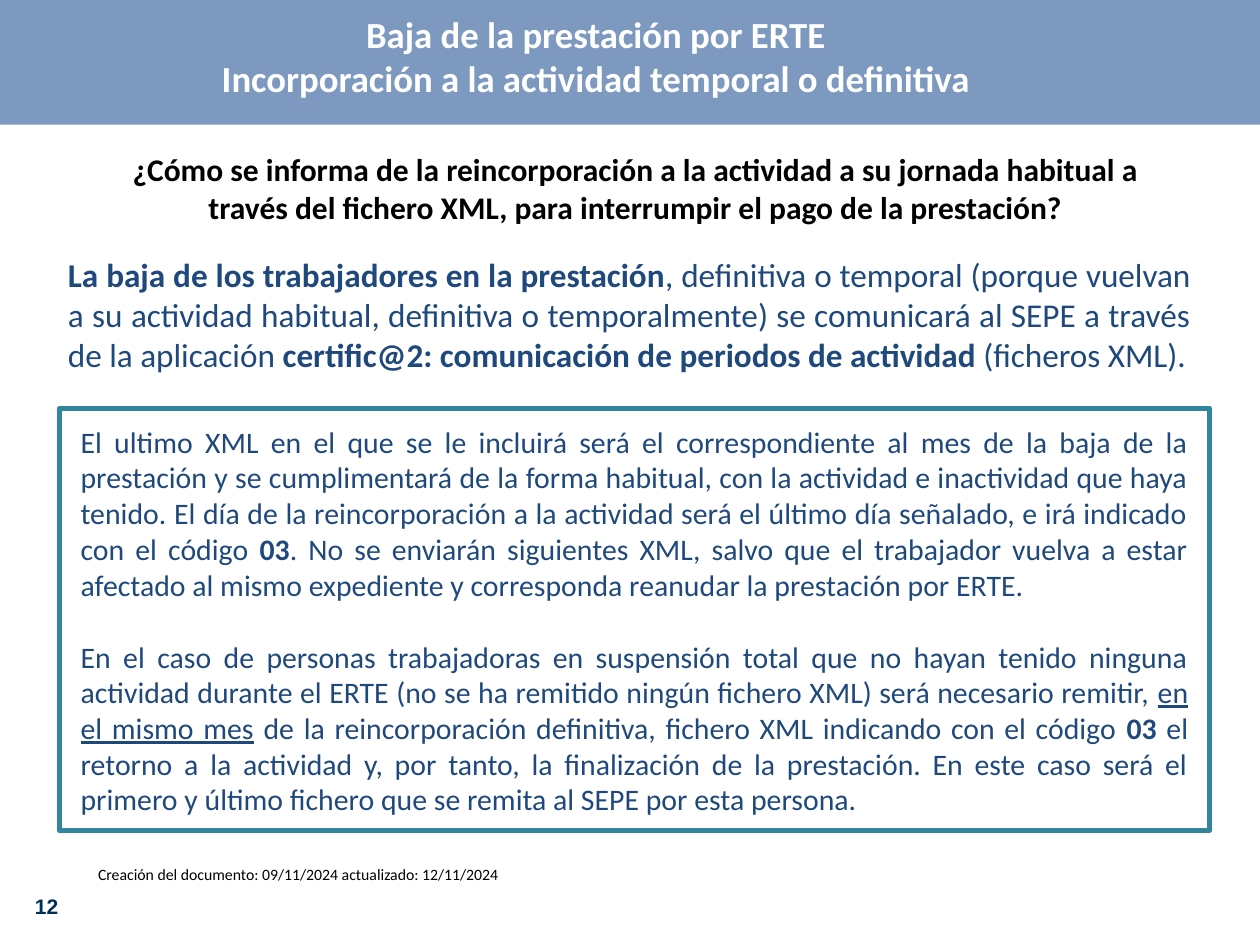
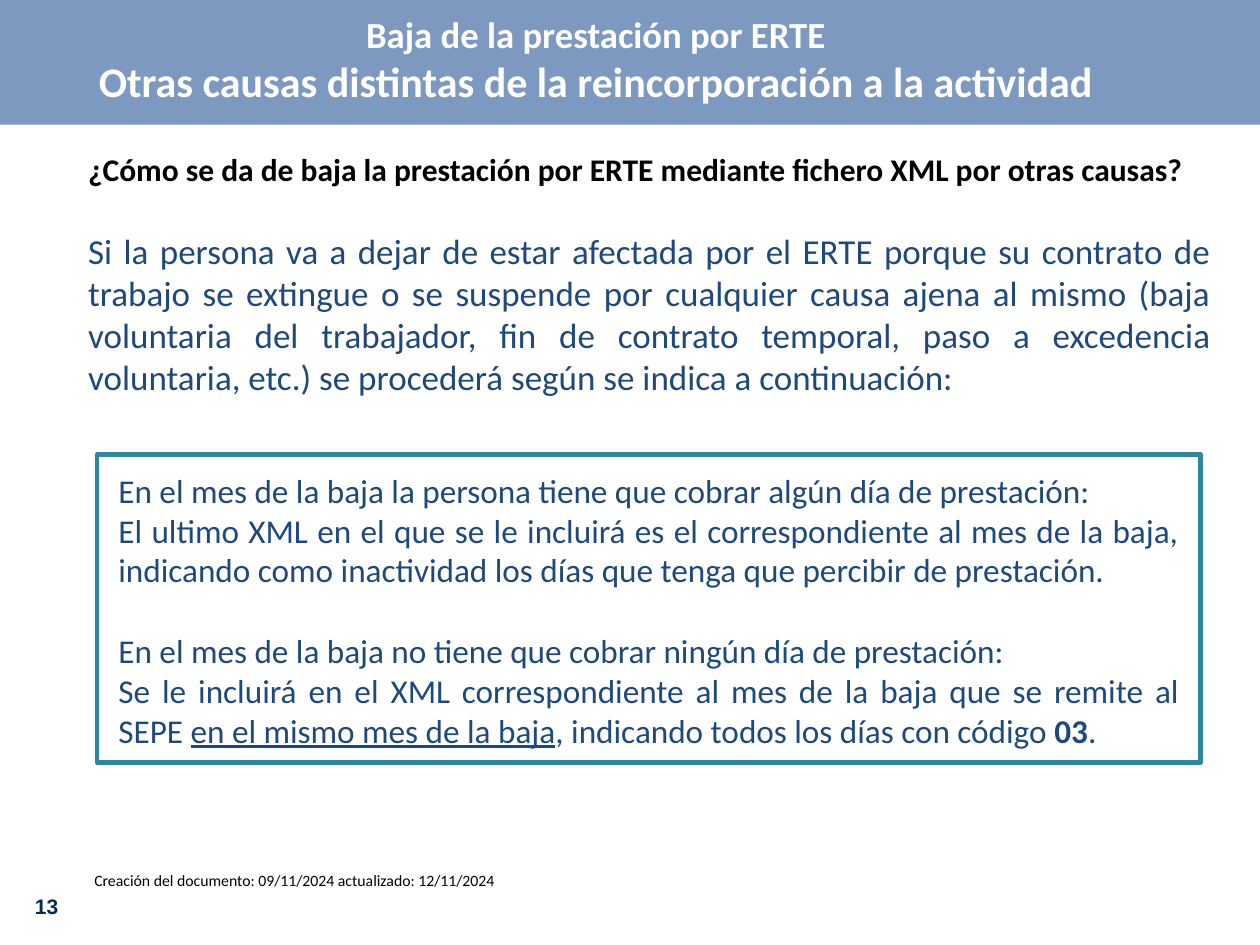
from pptx import Presentation
from pptx.dml.color import RGBColor
from pptx.enum.shapes import MSO_SHAPE
from pptx.enum.text import MSO_ANCHOR, PP_ALIGN
from pptx.util import Inches, Pt

RECTANGLE = MSO_SHAPE.RECTANGLE
TOP, MIDDLE = MSO_ANCHOR.TOP, MSO_ANCHOR.MIDDLE
LEFT, CENTER, JUSTIFY = PP_ALIGN.LEFT, PP_ALIGN.CENTER, PP_ALIGN.JUSTIFY

COLORS = {
    "band": "7E99C0",
    "white": "FFFFFF",
    "black": "000000",
    "number": "002E54",
    "body": "1F497D",
    "frame": "31859C",
}
STYLES = {
    "title": {"name": "Calibri", "size": Pt(21), "bold": True, "color": "white"},
    "question": {"name": "Calibri", "size": Pt(18), "bold": True, "color": "black"},
    "body": {"name": "Calibri", "size": Pt(19), "bold": False, "color": "body"},
    "footer": {"name": "Calibri", "size": Pt(9), "bold": False, "color": "black"},
    "number": {"name": "Arial", "size": Pt(12), "bold": True, "color": "number"},
}
BOLD = {"bold": True}
UNDERLINE = {"underline": True}
LINE_HEIGHT = 1.22
TEXT_INSETS = (0.1, 0.05, 0.1, 0.05)
BODY_INSETS = (0.11, 0.05, 0.11, 0.05)
FRAME_INSETS = (0.17, 0.12, 0.17, 0.09)

TOPIC = "Baja de la prestación por ERTE"
FOOTER = "Creación del documento: 09/11/2024 actualizado: 12/11/2024"

PAGES = [
    {
        "number": 12,
        "subtitle": "Incorporación a la actividad temporal o definitiva",
        "subtitle_format": {},
        "footer_box": (0.68, 6.81, 4.08, 0.25),
        "question_box": (0.28, 1.14, 9.53, 0.72),
        "question": [
            ["¿Cómo se informa de la reincorporación a la actividad a su jornada habitual a"],
            ["través del fichero XML, para interrumpir el pago de la prestación?"],
        ],
        "intro_box": (0.43, 1.97, 9.13, 1.07),
        "intro_size": 19,
        "intro": [[
            ("La baja de los trabajadores en la prestación", BOLD),
            ", definitiva o temporal (porque vuelvan a su actividad habitual, definitiva o "
            "temporalmente) se comunicará al SEPE a través de la aplicación ",
            ("certific@2: comunicación de periodos de actividad ", BOLD),
            "(ficheros XML).",
        ]],
        "frame_box": (0.47, 3.24, 9.13, 3.35),
        "frame_size": 17,
        "cases": [
            [[
                "El ultimo XML en el que se le incluirá será el correspondiente al mes de la baja "
                "de la prestación y se cumplimentará de la forma habitual, con la actividad e "
                "inactividad que haya tenido. El día de la reincorporación a la actividad será el "
                "último día señalado, e irá indicado con el código ",
                ("03", BOLD),
                ". No se enviarán siguientes XML, salvo que el trabajador vuelva a estar afectado "
                "al mismo expediente y corresponda reanudar la prestación por ERTE.",
            ]],
            [[
                "En el caso de personas trabajadoras en suspensión total que no hayan tenido "
                "ninguna actividad durante el ERTE (no se ha remitido ningún fichero XML) será "
                "necesario remitir, ",
                ("en el mismo mes", UNDERLINE),
                " de la reincorporación definitiva, fichero XML indicando con el código ",
                ("03 ", BOLD),
                "el retorno a la actividad y, por tanto, la finalización de la prestación. En este "
                "caso será el primero y último fichero que se remita al SEPE por esta persona.",
            ]],
        ],
    },
    {
        "number": 13,
        "subtitle": "Otras causas distintas de la reincorporación a la actividad",
        "subtitle_format": {"size": Pt(24)},
        "footer_box": (0.65, 6.86, 4.08, 0.25),
        "question_box": (0.28, 1.14, 9.53, 0.41),
        "question": [
            ["¿Cómo se da de baja la prestación por ERTE mediante fichero XML por otras causas?"],
        ],
        "intro_box": (0.59, 1.77, 9.13, 1.46),
        "intro_size": 20,
        "intro": [[
            "Si la persona va a dejar de estar afectada por el ERTE porque su contrato de trabajo "
            "se extingue o se suspende por cualquier causa ajena al mismo (baja voluntaria del "
            "trabajador, fin de contrato temporal, paso a excedencia voluntaria, etc.) se "
            "procederá según se indica a continuación:",
        ]],
        "frame_box": (0.77, 3.61, 8.76, 2.44),
        "frame_size": 19,
        "cases": [
            [
                ["En el mes de la baja la persona tiene que cobrar algún día de prestación:"],
                ["El ultimo XML en el que se le incluirá es el correspondiente al mes de la baja, "
                 "indicando como inactividad los días que tenga que percibir de prestación."],
            ],
            [
                ["En el mes de la baja no tiene que cobrar ningún día de prestación:"],
                [
                    "Se le incluirá en el XML correspondiente al mes de la baja que se remite al "
                    "SEPE ",
                    ("en el mismo mes de la baja", UNDERLINE),
                    ", indicando todos los días con código ",
                    ("03", BOLD),
                    ".",
                ],
            ],
        ],
    },
]


def rgb(name):
    """Return the named palette colour."""
    return RGBColor.from_string(COLORS[name])


def apply_format(font, values):
    """Set the font attributes listed in a dict of format values."""
    for attribute, value in values.items():
        if attribute == "color":
            font.color.rgb = rgb(value)
        else:
            setattr(font, attribute, value)


def write_text(shape, paragraphs, style, align, insets=TEXT_INSETS, anchor=TOP):
    """Fill a shape with paragraphs made of plain or specially formatted spans."""
    frame = shape.text_frame
    frame.word_wrap = True
    frame.vertical_anchor = anchor
    for side, inset in zip(("left", "top", "right", "bottom"), insets):
        setattr(frame, f"margin_{side}", Inches(inset))
    for index, spans in enumerate(paragraphs):
        para = frame.add_paragraph() if index else frame.paragraphs[0]
        para.alignment = align
        for span in spans:
            text, extra = (span, {}) if isinstance(span, str) else span
            run = para.add_run()
            run.text = text
            apply_format(run.font, {**style, **extra})
    return frame


def add_text(page, box, *args, **options):
    """Add a text box at the given box and write its paragraphs."""
    shape = page.shapes.add_textbox(*map(Inches, box))
    return write_text(shape, *args, **options)


def add_rectangle(page, box, fill=None, line=None):
    """Add a flat rectangle with an optional fill and outline."""
    shape = page.shapes.add_shape(RECTANGLE, *map(Inches, box))
    shape.shadow.inherit = False
    if fill:
        shape.fill.solid()
        shape.fill.fore_color.rgb = rgb(fill)
    else:
        shape.fill.background()
    if line:
        shape.line.color.rgb = rgb(line)
        shape.line.width = Pt(2.75)
    else:
        shape.line.fill.background()
    return shape


def add_header(page, content, box):
    """Draw the top band with its two title lines."""
    left, top, width, height = box
    add_rectangle(page, box, fill="band")
    title_box = (left + 0.13, top + 0.04, width - 0.8, height - 0.04)
    lines = [[TOPIC], [(content["subtitle"], content["subtitle_format"])]]
    add_text(page, title_box, lines, STYLES["title"], CENTER)


def add_footer(page, content, number_box):
    """Draw the page number and the document dates."""
    number = add_rectangle(page, number_box, fill="white")
    write_text(number, [[str(content["number"])]], STYLES["number"], CENTER, anchor=MIDDLE)
    add_text(page, content["footer_box"], [[FOOTER]], STYLES["footer"], LEFT)


def add_cases(page, content, box):
    """Draw the framed cases, one blank line's height apart."""
    size = content["frame_size"]
    cases = content["cases"]
    frame = write_text(
        add_rectangle(page, box, line="frame"),
        [spans for case in cases for spans in case],
        {**STYLES["body"], "size": Pt(size)}, JUSTIFY, FRAME_INSETS,
    )
    start = 0
    for case in cases[:-1]:
        start += len(case)
        frame.paragraphs[start].space_before = Pt(size * LINE_HEIGHT)


def build_page(deck, content):
    """Add one question-and-answer slide."""
    page = deck.slides.add_slide(deck.slide_layouts[6])
    add_header(page, content, (0, 0, 10, 0.99))
    add_footer(page, content, (0.07, 6.99, 0.6, 0.4))
    add_text(page, content["question_box"], content["question"],
             STYLES["question"], CENTER, BODY_INSETS)
    add_text(page, content["intro_box"], content["intro"],
             {**STYLES["body"], "size": Pt(content["intro_size"])}, JUSTIFY, BODY_INSETS)
    add_cases(page, content, content["frame_box"])


def main():
    """Build and save the deck."""
    deck = Presentation()
    deck.slide_width, deck.slide_height = Inches(10), Inches(7.5)
    for content in PAGES:
        build_page(deck, content)
    deck.save("out.pptx")


if __name__ == "__main__":
    main()
